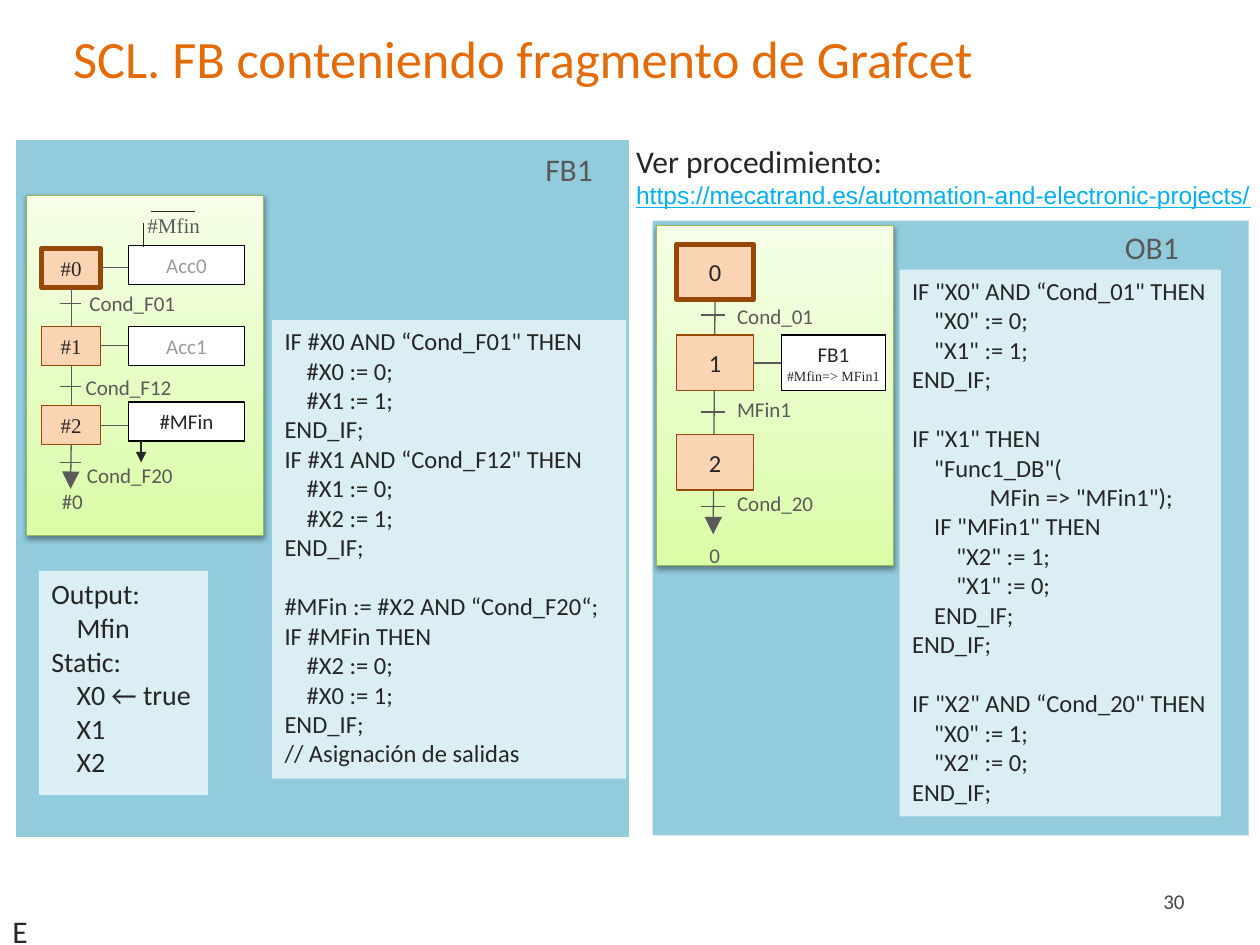
from lxml.etree import SubElement
from pptx import Presentation
from pptx.dml.color import RGBColor
from pptx.enum.shapes import MSO_CONNECTOR, MSO_SHAPE
from pptx.enum.text import MSO_ANCHOR, PP_ALIGN
from pptx.oxml.ns import qn
from pptx.util import Inches, Pt

COLORS = {
    "title": "E36C09", "ink": "262626", "label": "595959", "muted": "9B9B9B",
    "number": "464646", "link": "00B0F0", "panel": "92CCDC", "code": "DAEEF3",
    "step": "FBD4B4", "step_line": "974806", "white": "FFFFFF", "black": "000000",
    "chart_low": "DAFDA7", "chart_high": "F5FFE7", "chart_line": "98B955",
}

FB_CODE = """IF #X0 AND “Cond_F01" THEN
    #X0 := 0;
    #X1 := 1;
END_IF;
IF #X1 AND “Cond_F12" THEN
    #X1 := 0;
    #X2 := 1;
END_IF;

#MFin := #X2 AND “Cond_F20“;
IF #MFin THEN
    #X2 := 0;
    #X0 := 1;
END_IF;
// Asignación de salidas"""

OB_CODE = """IF "X0" AND “Cond_01" THEN
    "X0" := 0;
    "X1" := 1;
END_IF;

IF "X1" THEN
    "Func1_DB"(
              MFin => "MFin1");
    IF "MFin1" THEN
        "X2" := 1;
        "X1" := 0;
    END_IF;
END_IF;

IF "X2" AND “Cond_20" THEN
    "X0" := 1;
    "X2" := 0;
END_IF;"""


def rgb(name):
    return RGBColor.from_string(COLORS[name])


def write(shape, text, size, color="ink", font="Calibri", align=PP_ALIGN.LEFT,
          anchor=MSO_ANCHOR.TOP, inset=0.1, first=True):
    frame = shape.text_frame
    frame.word_wrap = True
    frame.vertical_anchor = anchor
    frame.margin_left = frame.margin_right = Inches(inset)
    frame.margin_top = frame.margin_bottom = Inches(inset / 2)
    para = frame.paragraphs[0] if first else frame.add_paragraph()
    para.alignment = align
    span = para.add_run()
    span.text = text
    span.font.size = Pt(size)
    span.font.name = font
    span.font.color.rgb = rgb(color)
    return para


def add_text(page, place, text, size, **style):
    box = page.shapes.add_textbox(*map(Inches, place))
    write(box, text, size, **style)
    return box


def add_label(page, left, top, text, height=0.31, **style):
    add_text(page, (left, top, 0.85, height), text, 12,
             **{"color": "label", "inset": 0, **style})


def add_box(page, place, fill, line=None, width=0.75):
    box = page.shapes.add_shape(MSO_SHAPE.RECTANGLE, *map(Inches, place))
    box.shadow.inherit = False
    box.fill.solid()
    box.fill.fore_color.rgb = rgb(fill)
    if line:
        box.line.color.rgb = rgb(line)
        box.line.width = Pt(width)
    else:
        box.line.fill.background()
    return box


def add_chart_panel(page, left, top):
    panel = add_box(page, (left, top, 1.88, 2.7), "chart_low", "chart_line")
    panel.fill.gradient()
    panel.fill.gradient_angle = 90
    for stop, name, position in zip(panel.fill.gradient_stops, ("chart_low", "chart_high"), (0, 1)):
        stop.color.rgb = rgb(name)
        stop.position = position
    effects = panel._element.spPr.find(qn("a:effectLst"))
    shadow = SubElement(effects, qn("a:outerShdw"), blurRad=str(Pt(3.1)), dist=str(Pt(1.6)),
                        dir="5400000", rotWithShape="0")
    shade = SubElement(shadow, qn("a:srgbClr"), val=COLORS["black"])
    SubElement(shade, qn("a:alpha"), val="38000")


def add_line(page, start, end, color="label", head=None):
    line = page.shapes.add_connector(MSO_CONNECTOR.STRAIGHT, *map(Inches, start + end))
    line.line.color.rgb = rgb(color)
    line.line.width = Pt(0.75)
    if head:
        SubElement(line.line._get_or_add_ln(), qn("a:tailEnd"), type="triangle", w=head, len=head)
    SubElement(line._element.spPr, qn("a:effectLst"))
    return line


def add_step(page, place, text, size, font, initial):
    step = add_box(page, place, "step", "step_line", 3 if initial else 0.75)
    write(step, text, size, font=font, align=PP_ALIGN.CENTER, anchor=MSO_ANCHOR.MIDDLE)
    return step


def add_action(page, place, step, text, color="ink", inset=0.1):
    left, top, width, height = place
    action = add_box(page, place, "white", "black")
    write(action, text, 12, color=color, align=PP_ALIGN.CENTER,
          anchor=MSO_ANCHOR.MIDDLE, inset=inset)
    middle = (step.top + step.height / 2) / Inches(1)
    line = add_line(page, (left, middle), (left - 0.22, middle))
    if action.top == step.top:
        line.begin_connect(action, 1)
    line.end_connect(step, 3)
    return action


def add_code(page, place, code):
    box = add_box(page, place, "code")
    gap = False
    for index, text in enumerate(code.split("\n")):
        if text:
            para = write(box, text, 14, first=index == 0)
            if gap:
                para.space_before = Pt(17)
        gap = not text


def add_variables(page):
    box = add_box(page, (0.31, 4.53, 1.34, 1.78), "code")
    for index, text in enumerate(("Output:", "Mfin", "Static:", "X0 ← true", "X1", "X2")):
        para = write(box, text, 16, first=index == 0)
        if not text.endswith(":"):
            para._p.get_or_add_pPr().set("marL", str(Inches(0.2)))


def add_main_chart(page):
    trunk = add_line(page, (5.68, 2.38), (5.66, 4.24), head="lg")
    steps = [add_step(page, (5.37, top, 0.61, 0.44), str(number), 14, "Calibri", number == 0)
             for number, top in enumerate((1.94, 2.66, 3.45))]
    trunk.begin_connect(steps[0], 2)
    action = add_action(page, (6.2, 2.66, 0.83, 0.44), steps[1], "FB1", inset=0)
    write(action, "#Mfin=> MFin1", 8, font="Times New Roman", align=PP_ALIGN.CENTER,
          anchor=MSO_ANCHOR.MIDDLE, inset=0, first=False)
    for top, text, bar in ((2.35, "Cond_01", 2.5), (3.09, "MFin1", 3.27), (3.84, "Cond_20", 4.02)):
        add_label(page, 5.85, top, text, anchor=MSO_ANCHOR.MIDDLE)
        add_line(page, (5.56, bar), (5.75, bar))
    add_label(page, 5.63, 4.31, "0", height=0.27)


def add_block_chart(page):
    steps = [add_step(page, (0.33, top, 0.47, 0.31), f"#{number}", 12, "Times New Roman", number == 0)
             for number, top in enumerate((1.97, 2.59, 3.22))]
    for upper, lower in zip(steps, steps[1:]):
        line = add_line(page, (0.57, 2.28), (0.57, 2.59))
        line.begin_connect(upper, 2)
        line.end_connect(lower, 0)
    add_line(page, (0.56, 3.53), (0.56, 3.88), head="lg").begin_connect(steps[2], 2)
    actions = ((1.95, "Acc0", "muted"), (2.59, "Acc1", "muted"), (3.19, "#MFin", "ink"))
    for step, (top, text, color) in zip(steps, actions):
        add_action(page, (1.02, top, 0.92, 0.31), step, text, color)
    for left, top, text, bar in ((0.71, 2.31, "Cond_F01", 2.41), (0.68, 2.97, "Cond_F12", 3.07),
                                 (0.69, 3.67, "Cond_F20", 3.67)):
        add_label(page, left, top, text, height=0.26)
        add_line(page, (0.48, bar), (0.64, bar))
    add_label(page, 0.49, 3.88, "#0", height=0.27)
    add_line(page, (1.12, 3.5), (1.12, 3.67), "ink", head="med")
    add_line(page, (1.14, 1.77), (1.14, 1.96), "ink")
    add_label(page, 1.17, 1.69, "#Mfin", height=0.2, font="Times New Roman")
    add_line(page, (1.2, 1.68), (1.55, 1.68), "ink")


def add_title(page, text):
    title = page.shapes.title
    title.left, title.top, title.width, title.height = map(Inches, (0.48, 0.08, 9.19, 0.75))
    write(title, text, 30, color="title", anchor=MSO_ANCHOR.MIDDLE)


def main():
    deck = Presentation()
    deck.slide_width, deck.slide_height = Inches(10), Inches(7.5)
    page = deck.slides.add_slide(deck.slide_layouts[5])
    add_title(page, "SCL. FB conteniendo fragmento de Grafcet")
    add_box(page, (5.18, 1.75, 4.73, 4.88), "panel")
    add_chart_panel(page, 5.21, 1.79)
    add_box(page, (0.11, 1.1, 4.9, 5.56), "panel", "white", 2)
    add_chart_panel(page, 0.21, 1.55)
    add_main_chart(page)
    add_block_chart(page)
    add_text(page, (8.83, 1.76, 0.7, 0.4), "OB1", 18, color="label")
    add_text(page, (4.23, 1.14, 0.7, 0.4), "FB1", 18, color="label")
    add_code(page, (7.14, 2.14, 2.55, 4.34), OB_CODE)
    add_code(page, (2.16, 2.54, 2.81, 3.64), FB_CODE)
    add_variables(page)
    note = add_text(page, (4.95, 1.08, 5.15, 0.64), "Ver procedimiento:", 18)
    address = write(note, "https://mecatrand.es/automation-and-electronic-projects/", 14,
                    color="link", font="Arial", first=False)
    address.runs[0].font.underline = True
    note.text_frame.word_wrap = False
    add_text(page, (7.17, 6.95, 2.33, 0.4), "30", 12, color="number",
             align=PP_ALIGN.RIGHT, anchor=MSO_ANCHOR.MIDDLE)
    add_text(page, (0, 7.16, 0.32, 0.38), "E", 18).text_frame.paragraphs[0].line_spacing = 1.11
    deck.save("out.pptx")


if __name__ == "__main__":
    main()
